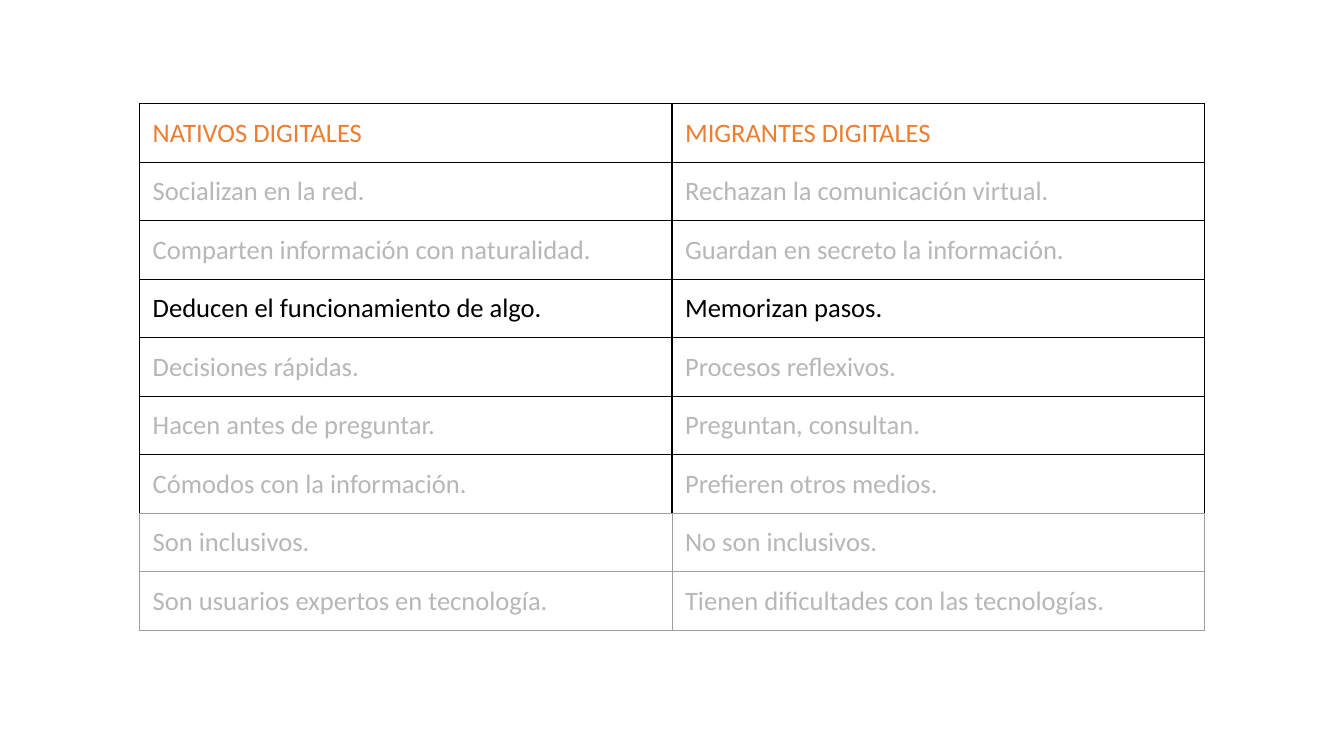
import dataclasses

import lxml.etree
import pptx
import pptx.dml.color
import pptx.enum.text
import pptx.oxml.ns
import pptx.util


@dataclasses.dataclass(frozen=True)
class Theme:
    font: str = "Calibri"
    text_size: float = 19
    heading: str = "ED7D31"
    muted: str = "B7B7B7"
    highlight: str = "000000"
    strong_border: tuple = ("000000", 1)
    soft_border: tuple = ("9E9E9E", 0.75)


THEME = Theme()
SLIDE_WIDTH = pptx.util.Inches(13.33)
SLIDE_HEIGHT = pptx.util.Inches(7.5)
COLUMN_WIDTH = pptx.util.Inches(5.28)
ROW_HEIGHT = pptx.util.Inches(0.58)
TABLE_TOP = pptx.util.Inches(1.03)
CELL_MARGIN = pptx.util.Inches(0.13)
HIGHLIGHT_ROW = 3
FIRST_SOFT_ROW = 7

COMPARISON = [
    ("NATIVOS DIGITALES", "MIGRANTES DIGITALES"),
    ("Socializan en la red.", "Rechazan la comunicación virtual."),
    ("Comparten información con naturalidad.", "Guardan en secreto la información."),
    ("Deducen el funcionamiento de algo.", "Memorizan pasos."),
    ("Decisiones rápidas.", "Procesos reflexivos."),
    ("Hacen antes de preguntar.", "Preguntan, consultan."),
    ("Cómodos con la información.", "Prefieren otros medios."),
    ("Son inclusivos.", "No son inclusivos."),
    ("Son usuarios expertos en tecnología.", "Tienen dificultades con las tecnologías."),
]


def row_color(row_index):
    return {0: THEME.heading, HIGHLIGHT_ROW: THEME.highlight}.get(row_index, THEME.muted)


def row_borders(row_index):
    side = THEME.strong_border if row_index < FIRST_SOFT_ROW else THEME.soft_border
    bottom = THEME.strong_border if row_index < FIRST_SOFT_ROW - 1 else THEME.soft_border
    return {"a:lnL": side, "a:lnR": side, "a:lnT": side, "a:lnB": bottom}


def set_borders(cell, borders):
    qualified = pptx.oxml.ns.qn
    properties = cell._tc.get_or_add_tcPr()
    for position, (tag, (color, width)) in enumerate(borders.items()):
        line = lxml.etree.Element(qualified(tag), w=str(pptx.util.Pt(width)))
        fill = lxml.etree.SubElement(line, qualified("a:solidFill"))
        lxml.etree.SubElement(fill, qualified("a:srgbClr"), val=color)
        properties.insert(position, line)


def write_cell(cell, text, color):
    cell.fill.background()
    cell.margin_left = cell.margin_right = CELL_MARGIN
    cell.margin_top = cell.margin_bottom = CELL_MARGIN
    cell.vertical_anchor = pptx.enum.text.MSO_ANCHOR.TOP
    run = cell.text_frame.paragraphs[0].add_run()
    run.text = text
    run.font.name = THEME.font
    run.font.size = pptx.util.Pt(THEME.text_size)
    run.font.bold = False
    run.font.color.rgb = pptx.dml.color.RGBColor.from_string(color)


def add_comparison_table(slide, rows):
    column_count = len(rows[0])
    width = COLUMN_WIDTH * column_count
    left = (SLIDE_WIDTH - width) // 2
    frame = slide.shapes.add_table(
        len(rows), column_count, left, TABLE_TOP, width, ROW_HEIGHT * len(rows)
    )
    table = frame.table
    table.first_row = False
    table.horz_banding = False
    for column in table.columns:
        column.width = COLUMN_WIDTH
    for row_index, texts in enumerate(rows):
        table.rows[row_index].height = ROW_HEIGHT
        for column_index, text in enumerate(texts):
            cell = table.cell(row_index, column_index)
            write_cell(cell, text, row_color(row_index))
            set_borders(cell, row_borders(row_index))


def main():
    presentation = pptx.Presentation()
    presentation.slide_width = SLIDE_WIDTH
    presentation.slide_height = SLIDE_HEIGHT
    slide = presentation.slides.add_slide(presentation.slide_layouts[6])
    add_comparison_table(slide, COMPARISON)
    presentation.save("out.pptx")


if __name__ == "__main__":
    main()
